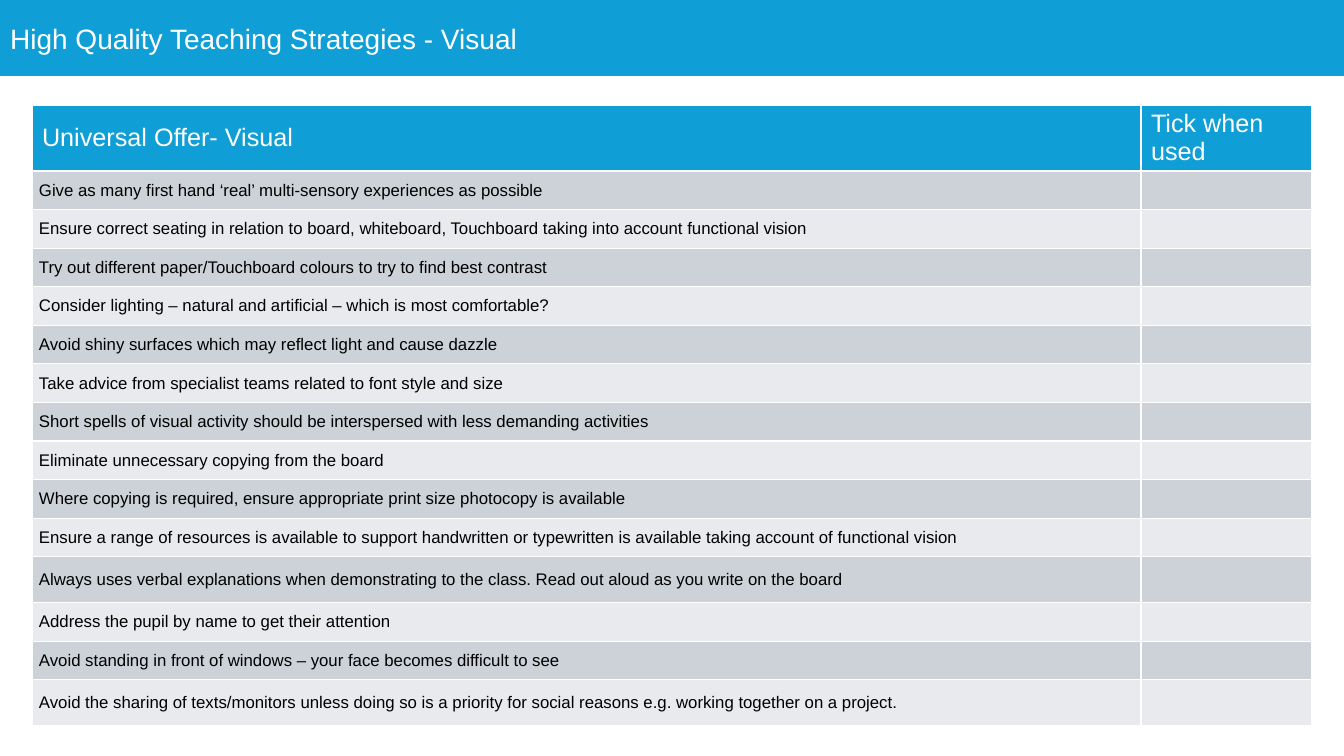
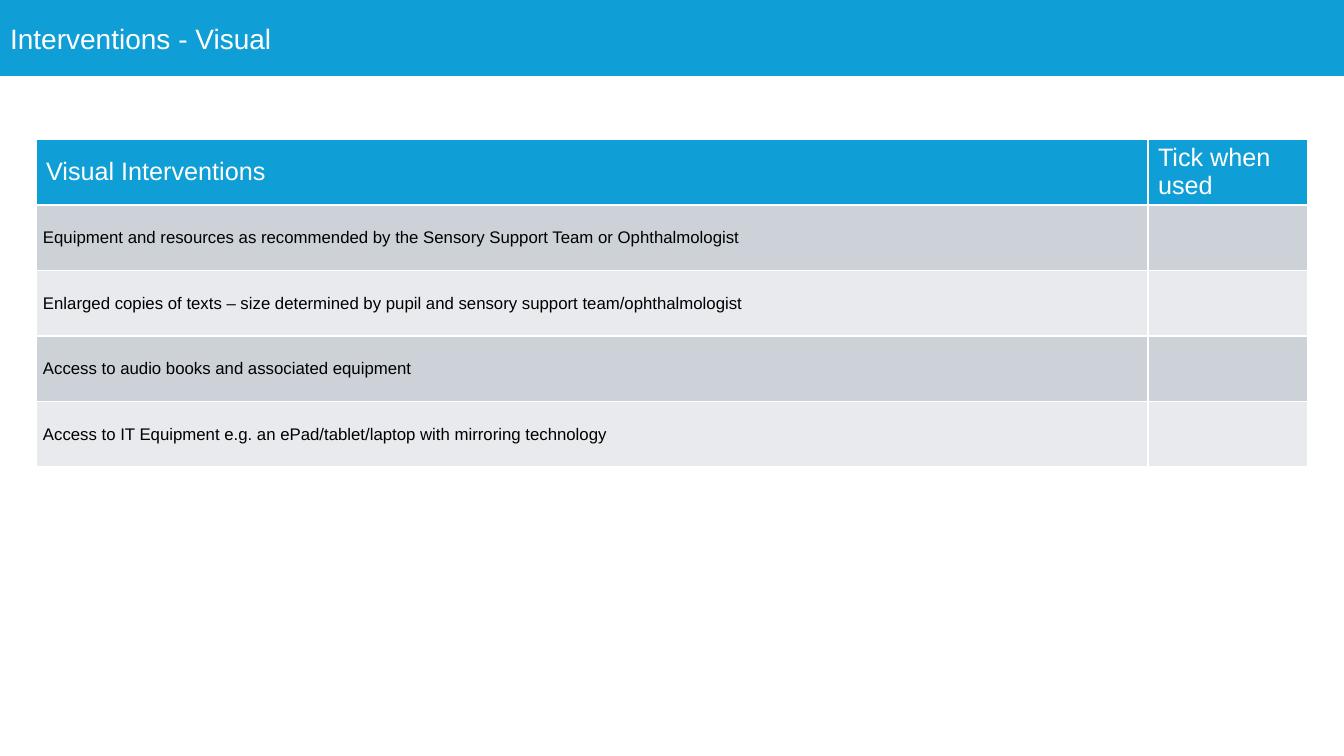
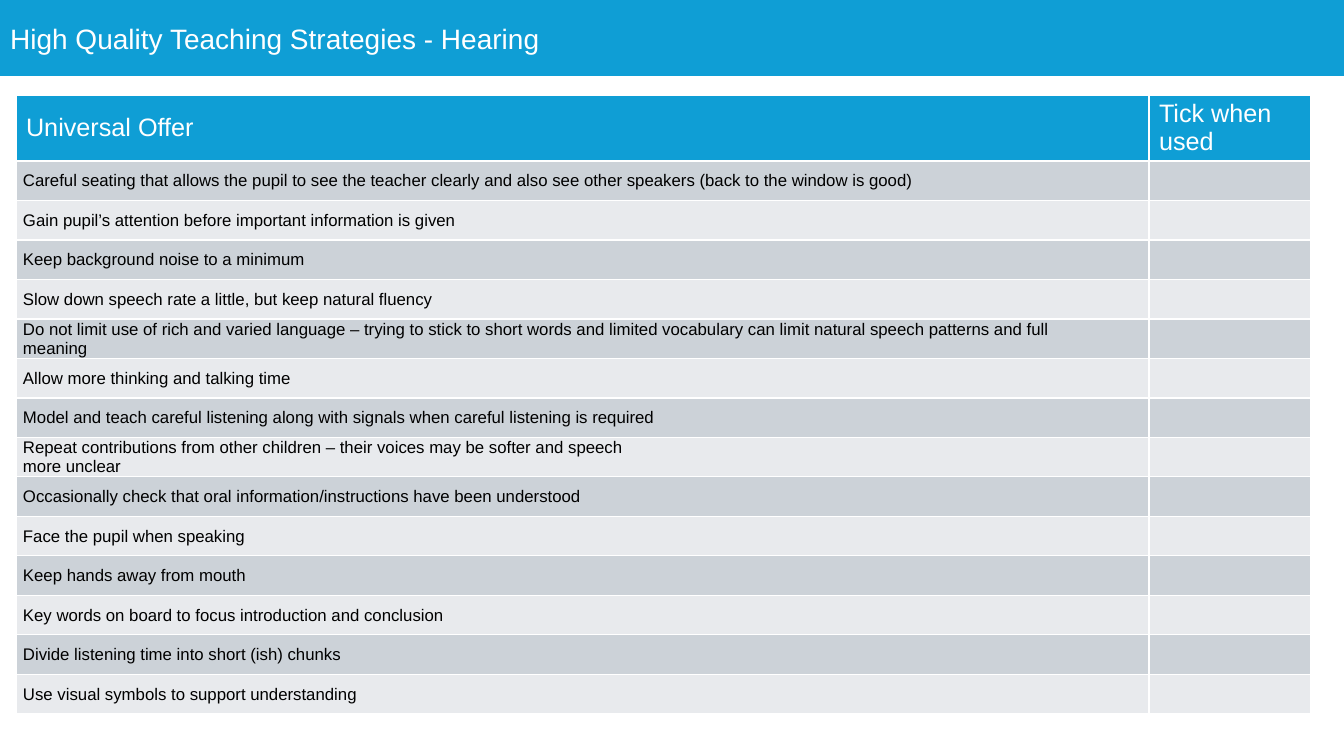
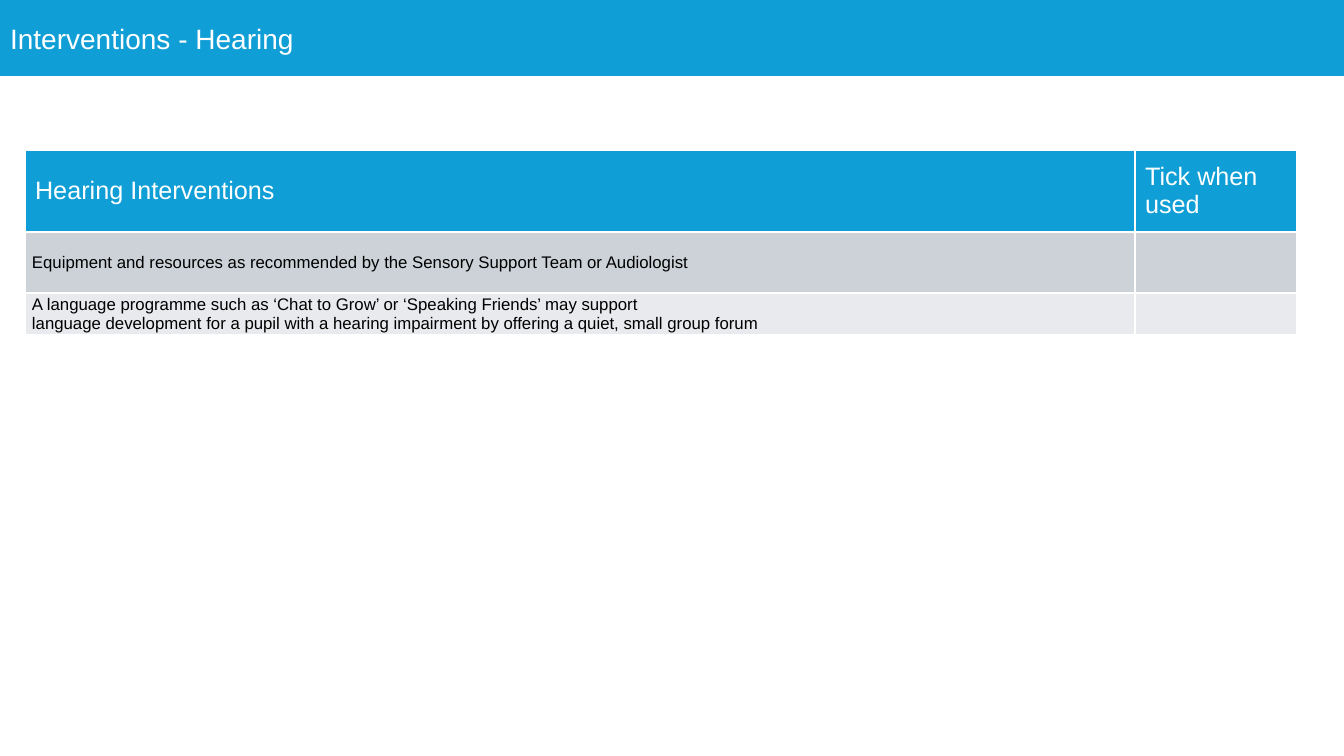
import pptx
import pptx.util
import pptx.dml.color
import pptx.enum.text

SCALE = 914400 / 100.8
PAGE_SIZE = (1344, 756)
BAND_HEIGHT = 76
FONT = "Arial"
COLOURS = {
    "blue": "0F9ED5",
    "white": "FFFFFF",
    "black": "000000",
    "odd": "CCD2D8",
    "even": "E8EAED",
}
TICK_HEADING = "Tick when used"

PAGES = [
    {
        "title": "High Quality Teaching Strategies - Visual",
        "heading": "Universal Offer- Visual",
        "place": (32, 105),
        "columns": (1109, 171),
        "header_height": 66,
        "body_height": 555,
        "fixed_rows": {11: 46, 14: 46},
        "items": [
            "Give as many first hand ‘real’ multi-sensory experiences as possible",
            "Ensure correct seating in relation to board, whiteboard, Touchboard taking into account functional vision",
            "Try out different paper/Touchboard colours to try to find best contrast",
            "Consider lighting – natural and artificial – which is most comfortable?",
            "Avoid shiny surfaces which may reflect light and cause dazzle",
            "Take advice from specialist teams related to font style and size",
            "Short spells of visual activity should be interspersed with less demanding activities",
            "Eliminate unnecessary copying from the board",
            "Where copying is required, ensure appropriate print size photocopy is available",
            "Ensure a range of resources is available to support handwritten or typewritten is available taking account of functional vision",
            "Always uses verbal explanations when demonstrating to the class. Read out aloud as you write on the board",
            "Address the pupil by name to get their attention",
            "Avoid standing in front of windows – your face becomes difficult to see",
            "Avoid the sharing of texts/monitors unless doing so is a priority for social reasons e.g. working together on a project.",
        ],
    },
    {
        "title": "Interventions - Visual",
        "heading": "Visual Interventions",
        "place": (36, 139),
        "columns": (1112, 160),
        "header_height": 66,
        "body_height": 262,
        "fixed_rows": {},
        "items": [
            "Equipment and resources as recommended by the Sensory Support Team or Ophthalmologist",
            "Enlarged copies of texts – size determined by pupil and sensory support team/ophthalmologist",
            "Access to audio books and associated equipment",
            "Access to IT Equipment e.g. an ePad/tablet/laptop with mirroring technology",
        ],
    },
    {
        "title": "High Quality Teaching Strategies - Hearing",
        "heading": "Universal Offer",
        "place": (16, 95),
        "columns": (1133, 162),
        "header_height": 66,
        "body_height": 553,
        "fixed_rows": {},
        "items": [
            "Careful seating that allows the pupil to see the teacher clearly and also see other speakers (back to the window is good)",
            "Gain pupil’s attention before important information is given",
            "Keep background noise to a minimum",
            "Slow down speech rate a little, but keep natural fluency",
            "Do not limit use of rich and varied language – trying to stick to short words and limited vocabulary can limit natural speech patterns and full meaning",
            "Allow more thinking and talking time",
            "Model and teach careful listening along with signals when careful listening is required",
            "Repeat contributions from other children – their voices may be softer and speech\nmore unclear",
            "Occasionally check that oral information/instructions have been understood",
            "Face the pupil when speaking",
            "Keep hands away from mouth",
            "Key words on board to focus introduction and conclusion",
            "Divide listening time into short (ish) chunks",
            "Use visual symbols to support understanding",
        ],
    },
    {
        "title": "Interventions - Hearing",
        "heading": "Hearing Interventions",
        "place": (25, 150),
        "columns": (1110, 162),
        "header_height": 82,
        "body_height": 103,
        "fixed_rows": {2: 42},
        "items": [
            "Equipment and resources as recommended by the Sensory Support Team or Audiologist",
            "A language programme such as ‘Chat to Grow’ or ‘Speaking Friends’ may support\nlanguage development for a pupil with a hearing impairment by offering a quiet, small group forum",
        ],
    },
]


def px(length):
    return pptx.util.Emu(round(length * SCALE))


def colour(name):
    return pptx.dml.color.RGBColor.from_string(COLOURS[name])


def paint(item, name):
    item.fill.solid()
    item.fill.fore_color.rgb = colour(name)


def write(frame, text, size, name, spacing=None):
    frame.text = text
    for para in frame.paragraphs:
        para.alignment = pptx.enum.text.PP_ALIGN.LEFT
        if spacing:
            para.line_spacing = pptx.util.Pt(spacing)
        for span in para.runs:
            span.font.name = FONT
            span.font.size = pptx.util.Pt(size)
            span.font.bold = False
            span.font.color.rgb = colour(name)


def add_band(page, text):
    band = page.shapes.title
    band.left, band.top = px(0), px(0)
    band.width, band.height = px(PAGE_SIZE[0]), px(BAND_HEIGHT)
    paint(band, "blue")
    band.text_frame.vertical_anchor = pptx.enum.text.MSO_ANCHOR.MIDDLE
    write(band.text_frame, text, 20, "white")


def row_heights(content):
    fixed = content["fixed_rows"]
    count = len(content["items"])
    shared = (content["body_height"] - sum(fixed.values())) / (count - len(fixed))
    return [content["header_height"]] + [fixed.get(row, shared) for row in range(1, count + 1)]


def fill_cell(cell, row, text):
    cell.vertical_anchor = pptx.enum.text.MSO_ANCHOR.MIDDLE
    if row == 0:
        paint(cell, "blue")
        cell.margin_top = cell.margin_bottom = px(4)
        write(cell.text_frame, text, 18, "white")
        return
    paint(cell, "odd" if row % 2 else "even")
    cell.margin_top = cell.margin_bottom = px(0)
    cell.margin_left, cell.margin_right = px(7), px(60)
    if text:
        write(cell.text_frame, text, 12, "black", 13.5)


def add_checklist(page, content):
    heights = row_heights(content)
    widths = content["columns"]
    left, top = content["place"]
    table = page.shapes.add_table(
        len(heights), len(widths), px(left), px(top), px(sum(widths)), px(sum(heights))
    ).table
    for column, width in zip(table.columns, widths):
        column.width = px(width)
    texts = [(content["heading"], TICK_HEADING)] + [(item, "") for item in content["items"]]
    for row, (height, pair) in enumerate(zip(heights, texts)):
        table.rows[row].height = px(height)
        for column, text in enumerate(pair):
            fill_cell(table.cell(row, column), row, text)


def main():
    deck = pptx.Presentation()
    deck.slide_width, deck.slide_height = px(PAGE_SIZE[0]), px(PAGE_SIZE[1])
    for content in PAGES:
        page = deck.slides.add_slide(deck.slide_layouts.get_by_name("Title Only"))
        add_band(page, content["title"])
        add_checklist(page, content)
    deck.save("out.pptx")


if __name__ == "__main__":
    main()
